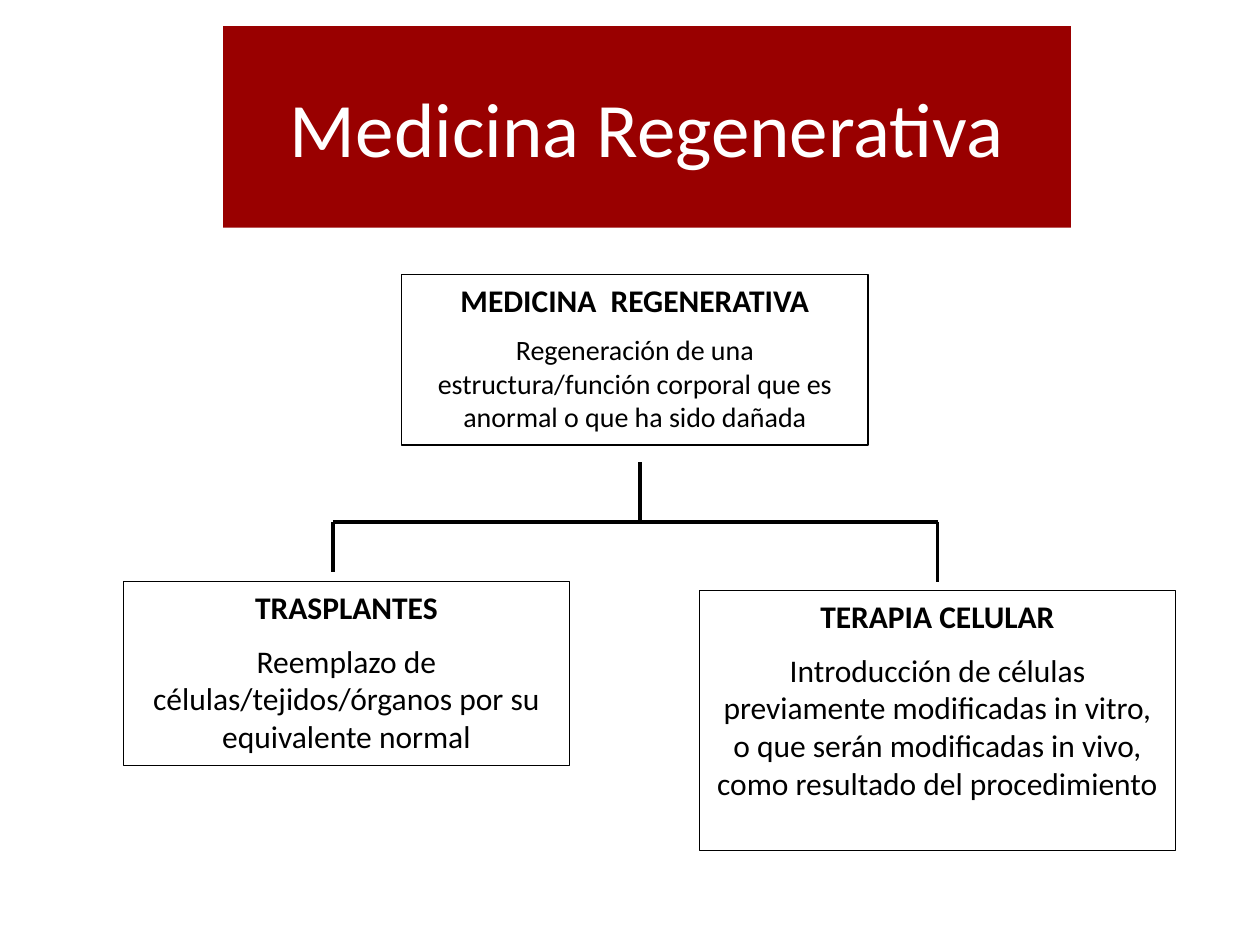
from dataclasses import dataclass

from lxml.etree import SubElement
from pptx import Presentation
from pptx.dml.color import RGBColor
from pptx.enum.shapes import MSO_CONNECTOR as Link, MSO_SHAPE as Preset
from pptx.enum.text import MSO_ANCHOR as Anchor, PP_ALIGN as Align
from pptx.oxml.ns import qn
from pptx.util import Cm, Pt


@dataclass(frozen=True)
class Theme:
    font: str = "Calibri"
    ink: RGBColor = RGBColor(0x00, 0x00, 0x00)
    banner: RGBColor = RGBColor(0x99, 0x00, 0x00)
    banner_ink: RGBColor = RGBColor(0xFF, 0xFF, 0xFF)
    title_size: float = 44
    heading_size: float = 18
    border: float = 0.75
    branch: float = 2.25


@dataclass(frozen=True)
class Box:
    left: float
    top: float
    width: float
    height: float


@dataclass(frozen=True)
class Concept:
    heading: str
    definition: str
    box: Box
    size: float = 18


@dataclass(frozen=True)
class Branch:
    x1: float
    y1: float
    x2: float
    y2: float


THEME = Theme()
TITLE_BOX = Box(4.5, 0.53, 17.09, 4.06)
CONCEPTS = [
    Concept(
        "MEDICINA  REGENERATIVA",
        "Regeneración de una estructura/función corporal que es anormal "
        "o que ha sido dañada",
        Box(8.1, 5.54, 9.4, 3.43),
        size=16,
    ),
    Concept(
        "TRASPLANTES",
        "Reemplazo de células/tejidos/órganos por su equivalente normal",
        Box(2.49, 11.73, 8.99, 3.71),
    ),
    Concept(
        "TERAPIA CELULAR",
        "Introducción de células previamente modificadas in vitro, o que "
        "serán modificadas in vivo, como resultado del procedimiento",
        Box(14.1, 11.91, 9.6, 5.23),
    ),
]
FORK_Y = 10.52
ROOT_X, TRANSPLANT_X, THERAPY_X = 12.9, 6.71, 18.9
BRANCHES = [
    Branch(TRANSPLANT_X, FORK_Y, THERAPY_X, FORK_Y),
    Branch(THERAPY_X, FORK_Y, THERAPY_X, 11.73),
    Branch(ROOT_X, FORK_Y, ROOT_X, 9.32),
    Branch(TRANSPLANT_X, FORK_Y, TRANSPLANT_X, 11.53),
]


def write(paragraph, text: str, *, size: float, color: RGBColor = THEME.ink,
          bold: bool = False, before: float = 0) -> None:
    paragraph.alignment = Align.CENTER
    paragraph.space_before = Pt(before)
    run = paragraph.add_run()
    run.text = text
    run.font.name = THEME.font
    run.font.size = Pt(size)
    run.font.bold = bold
    run.font.color.rgb = color


def draw_box(slide, box: Box, anchor: Anchor):
    panel = slide.shapes.add_shape(
        Preset.RECTANGLE, Cm(box.left), Cm(box.top), Cm(box.width), Cm(box.height))
    panel.shadow.inherit = False
    panel.text_frame.word_wrap = True
    panel.text_frame.vertical_anchor = anchor
    return panel


def draw_concept(slide, concept: Concept) -> None:
    panel = draw_box(slide, concept.box, Anchor.TOP)
    panel.fill.background()
    panel.line.color.rgb = THEME.ink
    panel.line.width = Pt(THEME.border)
    frame = panel.text_frame
    write(frame.paragraphs[0], concept.heading, size=THEME.heading_size, bold=True)
    write(frame.add_paragraph(), concept.definition, size=concept.size,
          before=concept.size / 2)


def draw_branch(slide, branch: Branch) -> None:
    link = slide.shapes.add_connector(
        Link.STRAIGHT, Cm(branch.x1), Cm(branch.y1), Cm(branch.x2), Cm(branch.y2))
    link.line.color.rgb = THEME.ink
    link.line.width = Pt(THEME.branch)
    SubElement(link._element.spPr, qn("a:effectLst"))


def draw_title(slide, text: str) -> None:
    banner = draw_box(slide, TITLE_BOX, Anchor.MIDDLE)
    banner.fill.solid()
    banner.fill.fore_color.rgb = THEME.banner
    banner.line.fill.background()
    write(banner.text_frame.paragraphs[0], text, size=THEME.title_size,
          color=THEME.banner_ink)


def main() -> None:
    deck = Presentation()
    deck.slide_width, deck.slide_height = Cm(25.4), Cm(19.05)
    slide = deck.slides.add_slide(deck.slide_layouts[6])
    for concept in CONCEPTS:
        draw_concept(slide, concept)
    for branch in BRANCHES:
        draw_branch(slide, branch)
    draw_title(slide, "Medicina Regenerativa")
    deck.save("out.pptx")


if __name__ == "__main__":
    main()
